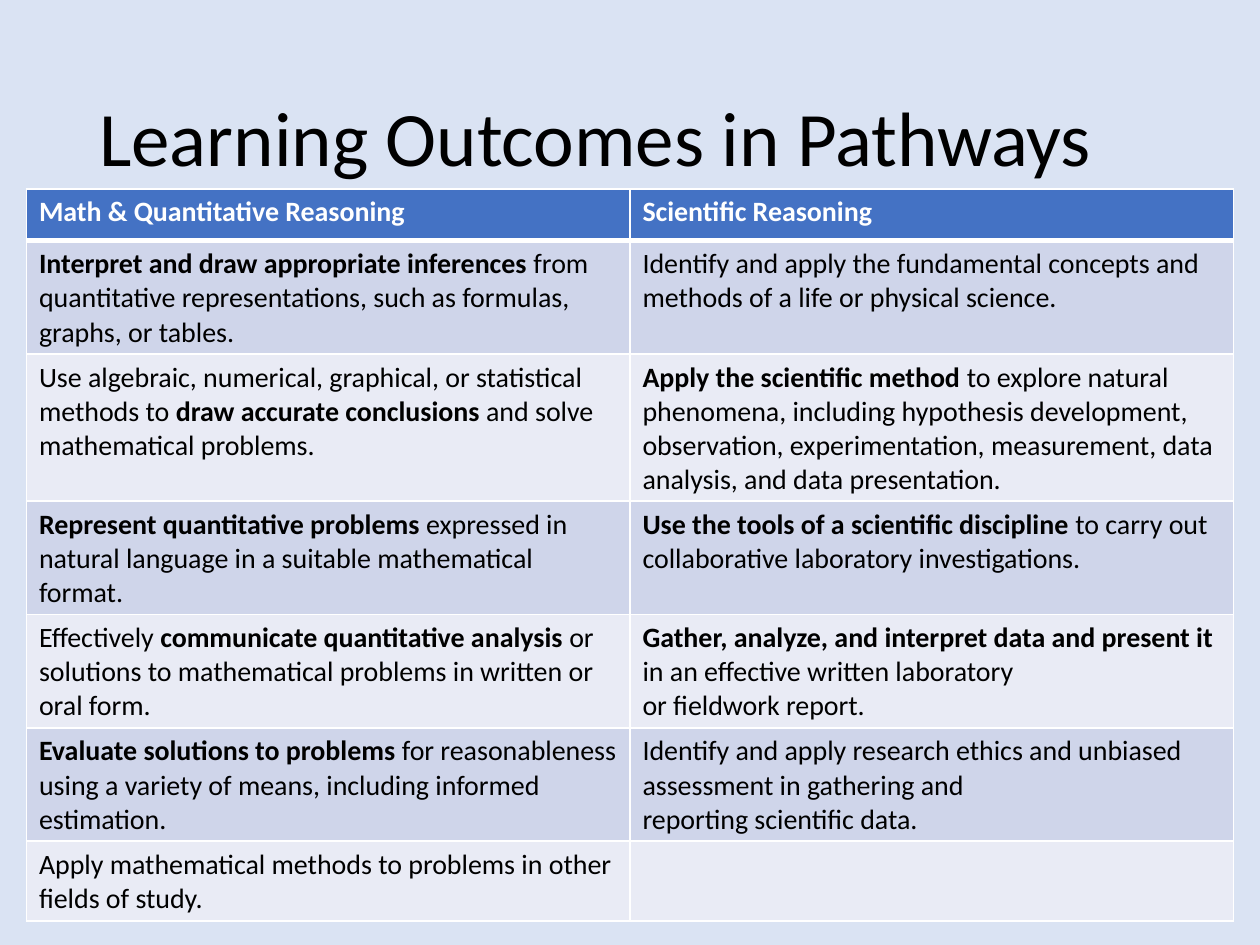
from lxml.etree import SubElement
from pptx import Presentation
from pptx.dml.color import RGBColor
from pptx.enum.text import MSO_ANCHOR
from pptx.oxml.ns import qn
from pptx.util import Inches, Pt

FONT = "Calibri"
WHITE, BLACK = "FFFFFF", "000000"
HEADER_FILL = "4472C4"
BAND_FILLS = ["E9EBF5", "CFD5EA"]
BOLD_MARK = "**"

OUTCOMES = [
    ("**Math & Quantitative Reasoning**", "**Scientific Reasoning**"),
    ("**Interpret and draw appropriate inferences **from quantitative representations, "
     "such as formulas, graphs, or tables.",
     "Identify and apply the fundamental concepts and methods of a life or physical science."),
    ("Use algebraic, numerical, graphical, or statistical methods to "
     "**draw accurate conclusions **and solve mathematical problems.",
     "**Apply the scientific method **to explore natural phenomena, including hypothesis "
     "development, observation, experimentation, measurement, data analysis, "
     "and data presentation."),
    ("**Represent quantitative problems **expressed in natural language in a suitable "
     "mathematical format.",
     "**Use the tools of a scientific discipline **to carry out collaborative "
     "laboratory investigations."),
    ("Effectively **communicate quantitative analysis **or solutions to mathematical "
     "problems in written or oral form.",
     "**Gather, analyze, and interpret data and present it **in an effective written "
     "laboratory\nor fieldwork report."),
    ("**Evaluate solutions to problems** for reasonableness using a variety of means, "
     "including informed estimation.",
     "Identify and apply research ethics and unbiased assessment in gathering and\n"
     "reporting scientific data."),
    ("Apply mathematical methods to problems in other fields of study.", ""),
]


def color(value):
    return RGBColor.from_string(value)


def style_font(paragraph, size, font_color):
    paragraph.font.name = FONT
    paragraph.font.size = Pt(size)
    paragraph.font.color.rgb = color(font_color)


def set_background(slide, fill_color):
    fill = slide.background.fill
    fill.solid()
    fill.fore_color.rgb = color(fill_color)


def add_title(slide, text):
    shape = slide.shapes.add_textbox(Inches(0.69), Inches(0.4), Inches(8.62), Inches(1.45))
    frame = shape.text_frame
    frame.word_wrap = True
    frame.vertical_anchor = MSO_ANCHOR.MIDDLE
    paragraph = frame.paragraphs[0]
    paragraph.text = text
    paragraph.line_spacing = 0.9
    style_font(paragraph, 44, BLACK)


def set_borders(cell, bottom_width):
    properties = cell._tc.get_or_add_tcPr()
    widths = {"a:lnL": 1, "a:lnR": 1, "a:lnT": 1, "a:lnB": bottom_width}
    for tag, width in widths.items():
        line = SubElement(properties, qn(tag), w=str(Pt(width)))
        fill = SubElement(line, qn("a:solidFill"))
        SubElement(fill, qn("a:srgbClr"), val=WHITE)


def write_cell(cell, text, font_color):
    frame = cell.text_frame
    for index, line in enumerate(text.split("\n")):
        paragraph = frame.add_paragraph() if index else frame.paragraphs[0]
        style_font(paragraph, 16, font_color)
        for part, content in enumerate(line.split(BOLD_MARK)):
            if content:
                run = paragraph.add_run()
                run.text = content
                run.font.bold = part % 2 == 1


def add_outcomes_table(slide, rows):
    row_height = Inches(0.41)
    table = slide.shapes.add_table(
        len(rows), 2, Inches(0.21), Inches(1.5), Inches(9.58), row_height * len(rows)
    ).table
    for row_index, texts in enumerate(rows):
        is_header = row_index == 0
        table.rows[row_index].height = row_height
        for column_index, text in enumerate(texts):
            cell = table.cell(row_index, column_index)
            set_borders(cell, 3 if is_header else 1)
            cell.fill.solid()
            cell.fill.fore_color.rgb = color(
                HEADER_FILL if is_header else BAND_FILLS[row_index % 2]
            )
            write_cell(cell, text, WHITE if is_header else BLACK)


def main():
    presentation = Presentation()
    presentation.slide_width = Inches(10)
    presentation.slide_height = Inches(7.5)
    slide = presentation.slides.add_slide(presentation.slide_layouts[6])
    set_background(slide, "DAE3F3")
    add_title(slide, "Learning Outcomes in Pathways")
    add_outcomes_table(slide, OUTCOMES)
    presentation.save("out.pptx")


if __name__ == "__main__":
    main()
